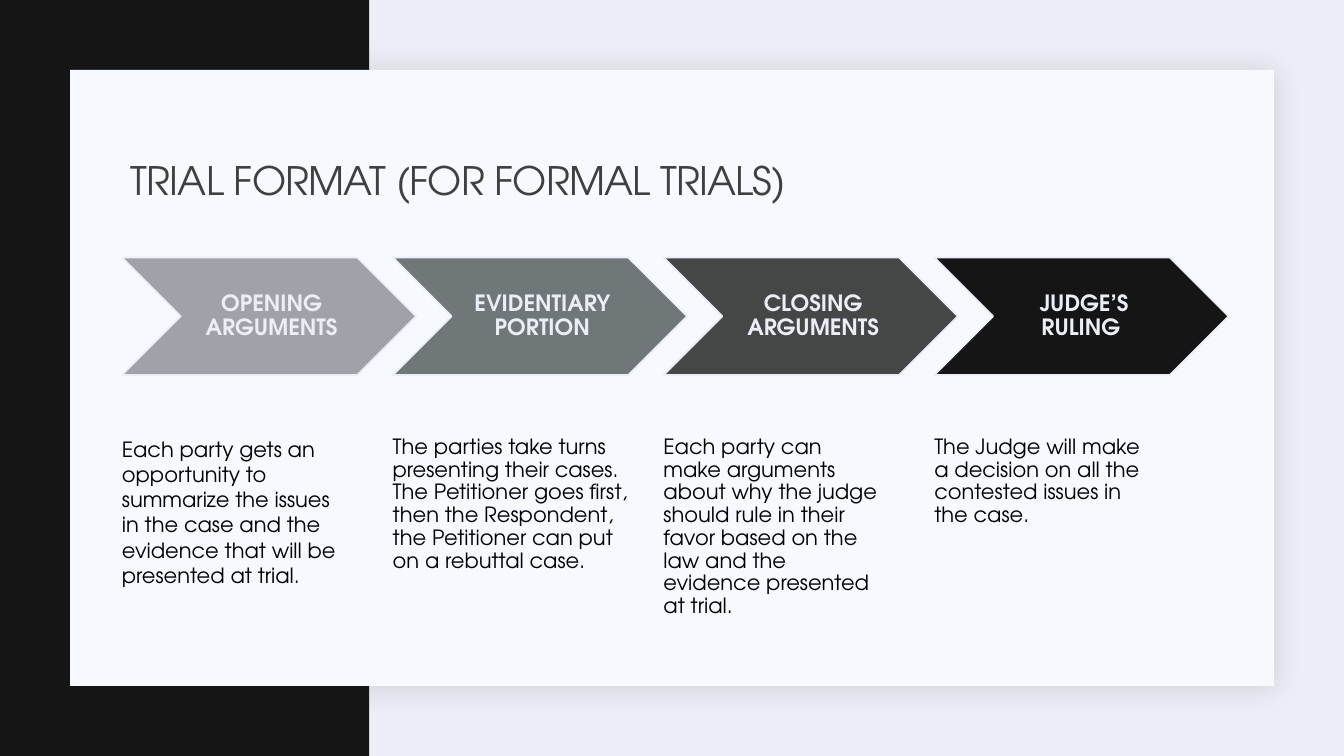
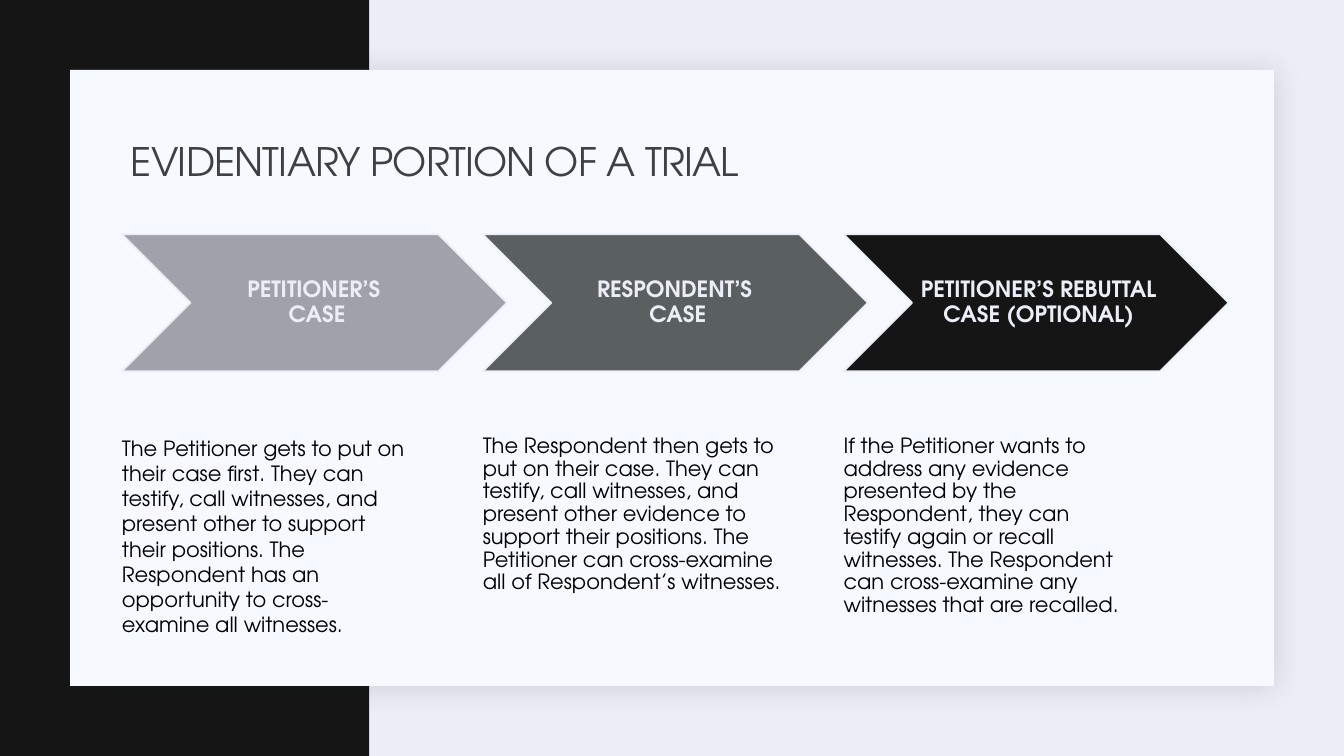
from typing import NamedTuple

from lxml import etree
from pptx import Presentation
from pptx.dml.color import RGBColor
from pptx.enum import shapes, text
from pptx.oxml import ns
from pptx.slide import Slide
from pptx.text.text import TextFrame, _Paragraph
from pptx.util import Pt

FONT = "TeX Gyre Adventor"
LAVENDER = RGBColor(0xEC, 0xEE, 0xF7)
PANEL = RGBColor(0xF6, 0xF9, 0xFF)
BLACK = RGBColor(0, 0, 0)
INK = RGBColor(0x14, 0x15, 0x14)
TITLE_GRAY = RGBColor(0x40, 0x40, 0x40)
SILVER = RGBColor(0xA1, 0xA2, 0xA9)
STEEL = RGBColor(0x70, 0x77, 0x79)
SLATE = RGBColor(0x5A, 0x60, 0x60)
CHARCOAL = RGBColor(0x43, 0x47, 0x45)
SHADOW = RGBColor(0x1F, 0x21, 0x25)

STEPS_LEFT, STEPS_SPAN = 87.1, 790.5
BODY_WIDTH_RATIO = 0.8


class Step(NamedTuple):
    label: str
    body: str
    fill: RGBColor
    line_spacing: float = 0.9
    right_inset: float = 14.4


class Process(NamedTuple):
    title: str
    title_top: float
    chevron_top: float
    chevron_width: float
    chevron_height: float
    body_top: float
    body_height: float
    steps: list[Step]


PROCESSES = [
    Process("TRIAL FORMAT (FOR FORMAL TRIALS)", 107.3, 183.9, 210.2, 84, 277.9, 166.3, [
        Step("OPENING ARGUMENTS",
             "Each party gets an opportunity to summarize the issues in the case and the "
             "evidence that will be presented at trial.", SILVER, line_spacing=1),
        Step("EVIDENTIARY PORTION",
             "The parties take turns presenting their cases. The Petitioner goes first, then "
             "the Respondent, the Petitioner can put on a rebuttal case.", STEEL, right_inset=0),
        Step("CLOSING ARGUMENTS",
             "Each party can make arguments about why the judge should rule in their favor "
             "based on the law and the evidence presented at trial.", CHARCOAL),
        Step("JUDGE’S RULING ",
             "The Judge will make a decision on all the contested issues in the case.", INK),
    ]),
    Process("EVIDENTIARY PORTION OF A TRIAL", 94.3, 167.4, 275, 97.8, 277.2, 183.6, [
        Step("PETITIONER’S \nCASE",
             "The Petitioner gets to put on their case first. They can testify, call "
             "witnesses, and present other to support their positions. The Respondent has an "
             "opportunity to cross-examine all witnesses.", SILVER, line_spacing=1),
        Step("RESPONDENT’S \nCASE",
             "The Respondent then gets to put on their case. They can testify, call "
             "witnesses, and present other evidence to support their positions. The "
             "Petitioner can cross-examine all of Respondent’s witnesses.", SLATE, right_inset=0),
        Step("PETITIONER’S REBUTTAL CASE (OPTIONAL)",
             "If the Petitioner wants to address any evidence presented by the Respondent, "
             "they can testify again or recall witnesses. The Respondent can cross-examine "
             "any witnesses that are recalled.", INK),
    ]),
]


def add_filled_shape(slide: Slide, kind: shapes.MSO_SHAPE, left: float, top: float,
                     width: float, height: float, fill: RGBColor):
    shape = slide.shapes.add_shape(kind, Pt(left), Pt(top), Pt(width), Pt(height))
    shape.shadow.inherit = False
    shape.fill.solid()
    shape.fill.fore_color.rgb = fill
    shape.line.fill.background()
    return shape


def add_text_box(slide: Slide, left: float, top: float, width: float,
                 height: float) -> TextFrame:
    box = slide.shapes.add_textbox(Pt(left), Pt(top), Pt(width), Pt(height))
    box.text_frame.word_wrap = True
    return box.text_frame


def set_insets(frame: TextFrame, left: float, top: float, right: float, bottom: float) -> None:
    frame.margin_left, frame.margin_top = Pt(left), Pt(top)
    frame.margin_right, frame.margin_bottom = Pt(right), Pt(bottom)


def write(paragraph: _Paragraph, words: str, size: float, color: RGBColor,
          bold: bool = False, line_spacing: float = 0.9) -> None:
    """Add one run per line of words, with line breaks between."""
    paragraph.line_spacing = line_spacing
    for index, line in enumerate(words.split("\n")):
        if index:
            paragraph.add_line_break()
        run = paragraph.add_run()
        run.text = line
        run.font.name = FONT
        run.font.size = Pt(size)
        run.font.bold = bold
        run.font.color.rgb = color


def add_soft_shadow(shape) -> None:
    effects = shape._element.spPr.find(ns.qn("a:effectLst"))
    shadow = etree.SubElement(effects, ns.qn("a:outerShdw"), blurRad=str(Pt(20)),
                              dist=str(Pt(2)), dir=str(45 * 60000), algn="tl", rotWithShape="0")
    color = etree.SubElement(shadow, ns.qn("a:srgbClr"), val=str(SHADOW))
    etree.SubElement(color, ns.qn("a:alpha"), val="15000")


def draw_frame(slide: Slide) -> None:
    """Draw the background, dark side band and raised panel."""
    slide.background.fill.solid()
    slide.background.fill.fore_color.rgb = LAVENDER
    rectangle = shapes.MSO_SHAPE.RECTANGLE
    add_filled_shape(slide, rectangle, 0, 0, 263.8, 540, INK)
    add_soft_shadow(add_filled_shape(slide, rectangle, 50, 50, 860, 440, PANEL))


def draw_title(slide: Slide, title: str, top: float) -> None:
    frame = add_text_box(slide, 86.4, top, 792, 46)
    frame.vertical_anchor = text.MSO_ANCHOR.MIDDLE
    paragraph = frame.paragraphs[0]
    write(paragraph, title, 28, TITLE_GRAY)
    paragraph.runs[0].font._element.set("spc", "-50")


def draw_step(slide: Slide, process: Process, step: Step, left: float) -> None:
    chevron = add_filled_shape(slide, shapes.MSO_SHAPE.CHEVRON, left, process.chevron_top,
                               process.chevron_width, process.chevron_height, step.fill)
    chevron.line.color.rgb = LAVENDER
    chevron.line.width = Pt(1.25)
    label = chevron.text_frame
    label.word_wrap = True
    label.vertical_anchor = text.MSO_ANCHOR.MIDDLE
    set_insets(label, 5, 1.4, 1.4, 1.4)
    label.paragraphs[0].alignment = text.PP_ALIGN.CENTER
    write(label.paragraphs[0], step.label, 16, LAVENDER, bold=True)

    body = add_text_box(slide, left, process.body_top,
                        process.chevron_width * BODY_WIDTH_RATIO, process.body_height)
    set_insets(body, 0, 33.8, step.right_inset, 0)
    write(body.paragraphs[0], step.body, 15, BLACK, line_spacing=step.line_spacing)


def draw_process(slide: Slide, process: Process) -> None:
    draw_frame(slide)
    pitch = (STEPS_SPAN - process.chevron_width) / (len(process.steps) - 1)
    for index, step in enumerate(process.steps):
        draw_step(slide, process, step, STEPS_LEFT + index * pitch)
    draw_title(slide, process.title, process.title_top)


def main() -> None:
    presentation = Presentation()
    presentation.slide_width, presentation.slide_height = Pt(960), Pt(540)
    for process in PROCESSES:
        draw_process(presentation.slides.add_slide(presentation.slide_layouts[6]), process)
    presentation.save("out.pptx")


if __name__ == "__main__":
    main()
